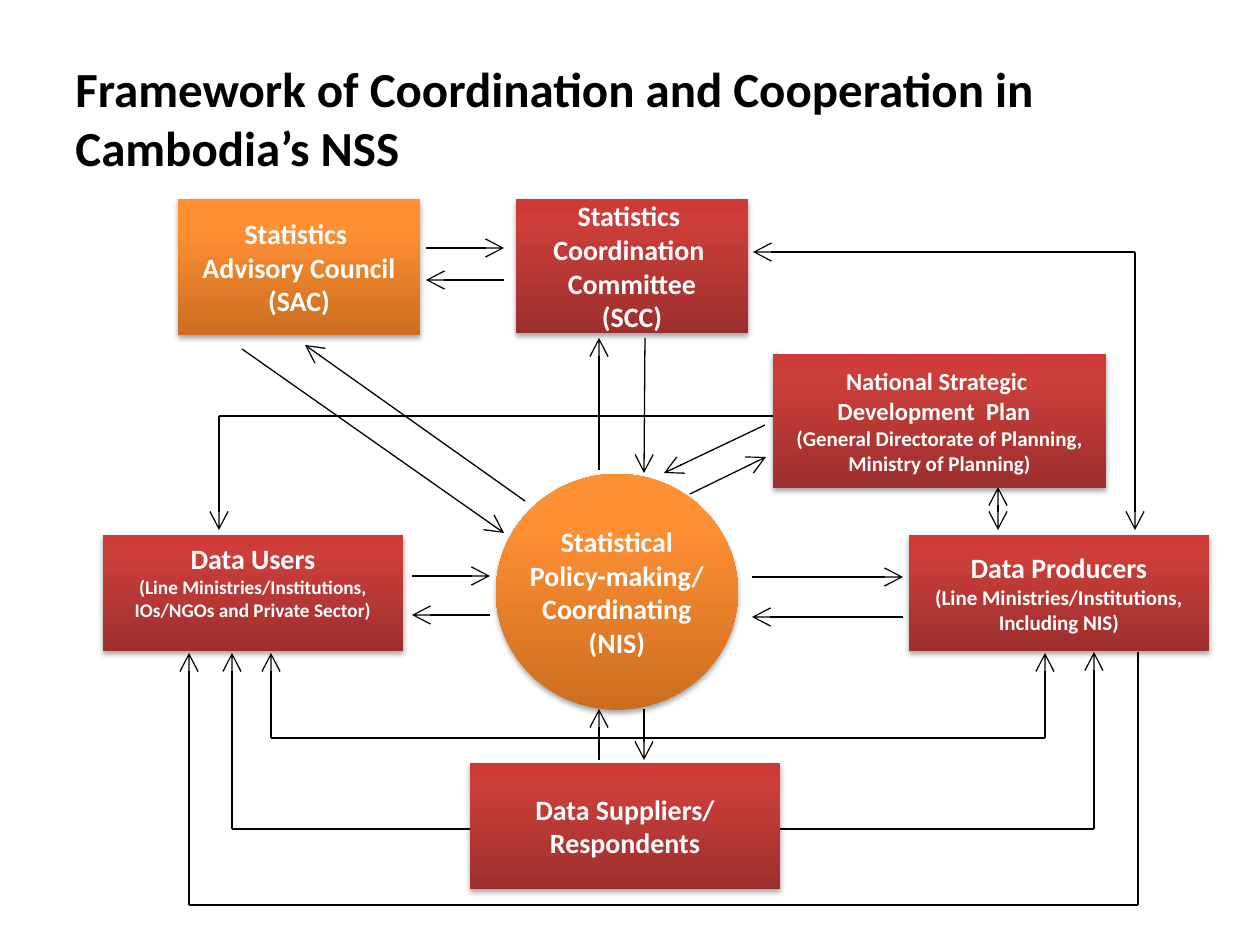
from pptx import Presentation
from pptx.dml.color import RGBColor
from pptx.enum.shapes import MSO_CONNECTOR, MSO_SHAPE
from pptx.enum.text import MSO_ANCHOR, PP_ALIGN
from pptx.oxml import parse_xml
from pptx.oxml.ns import nsdecls
from pptx.util import Pt

SCALE = 914400 / 126  # EMU per px
FONT = "Calibri"
RECT, OVAL = MSO_SHAPE.RECTANGLE, MSO_SHAPE.OVAL
LINE = MSO_CONNECTOR.STRAIGHT
MIDDLE, TOP = MSO_ANCHOR.MIDDLE, MSO_ANCHOR.TOP
CENTER, LEFT = PP_ALIGN.CENTER, PP_ALIGN.LEFT
COLORS = {"ink": "000000", "text": "FFFFFF"}
# Gradient stops at 0, 80 and 100 percent, from the bottom up
FILLS = {
    "orange": ("CC6E20", "FF9034", "FF9136"),
    "red": ("9C2F2D", "CB3E3A", "CE3B37"),
}

# Box, shape, fill, anchor, lines of (text, size)
NODES = [
    ((396, 284, 242, 236), OVAL, "orange", MIDDLE,
     [("Statistical", 16), ("Policy-making/", 16), ("Coordinating", 16), ("(NIS)", 16)]),
    ((78, 9, 242, 136), RECT, "orange", MIDDLE,
     [("Statistics ", 16), ("Advisory Council", 16), ("(SAC)", 16)]),
    ((416, 9, 232, 134), RECT, "red", MIDDLE,
     [("Statistics ", 16), ("Coordination ", 16), ("Committee", 16), ("(SCC)", 16)]),
    ((673, 164, 333, 134), RECT, "red", MIDDLE,
     [("National Strategic ", 14), ("Development  Plan  ", 14),
      ("(General Directorate of Planning,", 12), ("Ministry of Planning)", 12)]),
    ((809, 345, 300, 116), RECT, "red", MIDDLE,
     [("Data Producers", 16), ("(Line Ministries/Institutions,", 12), ("Including NIS)", 12)]),
    ((370, 573, 310, 126), RECT, "red", MIDDLE,
     [("Data Suppliers/\vRespondents", 16)]),
    ((3, 345, 300, 116), RECT, "red", TOP,
     [("Data Users", 16), ("(Line Ministries/Institutions,", 11),
      ("IOs/NGOs and Private Sector)", 11)]),
]

# Points of each route, and the ends that carry an arrowhead
ROUTES = [
    ([(326, 58), (404, 58)], "end"),  # SAC and SCC
    ([(404, 90), (326, 90)], "end"),
    ([(545, 148), (544, 283)], "end"),  # SCC and NIS
    ([(499, 280), (499, 148)], "end"),
    ([(425, 311), (205, 155)], "end"),  # SAC and NIS
    ([(142, 159), (404, 343)], "end"),
    ([(665, 235), (564, 283)], "end"),  # plan and NIS
    ([(590, 304), (666, 267)], "end"),
    ([(312, 386), (390, 386)], "end"),  # users and NIS
    ([(390, 425), (312, 425)], "end"),
    ([(652, 387), (803, 387)], "end"),  # NIS and producers
    ([(803, 427), (652, 427)], "end"),
    ([(544, 519), (544, 570)], "end"),  # NIS and suppliers
    ([(499, 570), (499, 519)], "end"),
    ([(898, 297), (898, 340)], "both"),  # plan and producers
    ([(653, 62), (1035, 62), (1035, 340)], "both"),  # SCC and producers
    ([(673, 226), (119, 226), (119, 340)], "end"),  # plan to users
    ([(171, 463), (171, 548), (945, 548), (945, 463)], "both"),  # users and producers
    ([(679, 639), (994, 639), (994, 462)], "end"),  # suppliers to producers
    ([(372, 639), (132, 639), (132, 463)], "end"),  # suppliers to users
    ([(1038, 462), (1038, 715), (89, 715), (89, 463)], "end"),  # producers to users
]


def px(*values):
    return [round(v * SCALE) for v in values]


def write(frame, lines, color, align):
    for i, (text, size) in enumerate(lines):
        para = frame.paragraphs[0] if i == 0 else frame.add_paragraph()
        para.text = text
        para.alignment = align
        for run in para.runs:
            run.font.name = FONT
            run.font.size = Pt(size)
            run.font.bold = True
            run.font.color.rgb = RGBColor.from_string(COLORS[color])


def add_title(slide, box, text):
    frame = slide.shapes.add_textbox(*px(*box)).text_frame
    frame.word_wrap = True
    frame.vertical_anchor = MIDDLE
    write(frame, [(text, 28)], "ink", LEFT)


def add_node(slide, box, kind, fill, anchor, lines):
    shape = slide.shapes.add_shape(kind, *px(*box))
    shape.line.fill.background()
    # Three-stop gradient and soft shadow
    stops = "".join(
        f'<a:gs pos="{pos}000"><a:srgbClr val="{color}"/></a:gs>'
        for pos, color in zip((0, 80, 100), FILLS[fill]))
    props = shape.element.spPr
    props.insert(2, parse_xml(
        f'<a:gradFill {nsdecls("a")} rotWithShape="1"><a:gsLst>{stops}</a:gsLst>'
        '<a:lin ang="16200000" scaled="0"/></a:gradFill>'))
    props.append(parse_xml(
        f'<a:effectLst {nsdecls("a")}><a:outerShdw blurRad="40000" dist="23000" '
        'dir="5400000" rotWithShape="0"><a:srgbClr val="000000">'
        '<a:alpha val="35000"/></a:srgbClr></a:outerShdw></a:effectLst>'))
    frame = shape.text_frame
    frame.word_wrap = False
    frame.vertical_anchor = anchor
    frame.margin_top = frame.margin_bottom = px(7)[0]
    write(frame, lines, "text", CENTER)


def add_route(slide, points, ends):
    last = len(points) - 2
    for i, (start, end) in enumerate(zip(points, points[1:])):
        line = slide.shapes.add_connector(LINE, *px(*start, *end))
        line.line.width = Pt(0.75)
        line.line.color.rgb = RGBColor.from_string(COLORS["ink"])
        props = line.element.spPr
        tips = []
        if i == 0 and ends == "both":
            tips.append("headEnd")
        if i == last:
            tips.append("tailEnd")
        for tip in tips:
            props.ln.append(parse_xml(
                f'<a:{tip} {nsdecls("a")} type="arrow" w="lg" len="lg"/>'))
        props.append(parse_xml(f'<a:effectLst {nsdecls("a")}/>'))


def add_chart_map(slide, box):
    left, top = box[:2]
    for points, ends in ROUTES:
        add_route(slide, [(left + x, top + y) for x, y in points], ends)
    for (x, y, wide, high), *rest in NODES:
        add_node(slide, (left + x, top + y, wide, high), *rest)


def main():
    deck = Presentation()
    deck.slide_width, deck.slide_height = px(1260, 945)
    slide = deck.slides.add_slide(deck.slide_layouts[6])
    add_title(slide, (63, 38, 1176, 158),
              "Framework of Coordination and Cooperation in Cambodia’s NSS")
    add_chart_map(slide, (100, 190, 1110, 720))
    deck.save("out.pptx")


if __name__ == "__main__":
    main()
